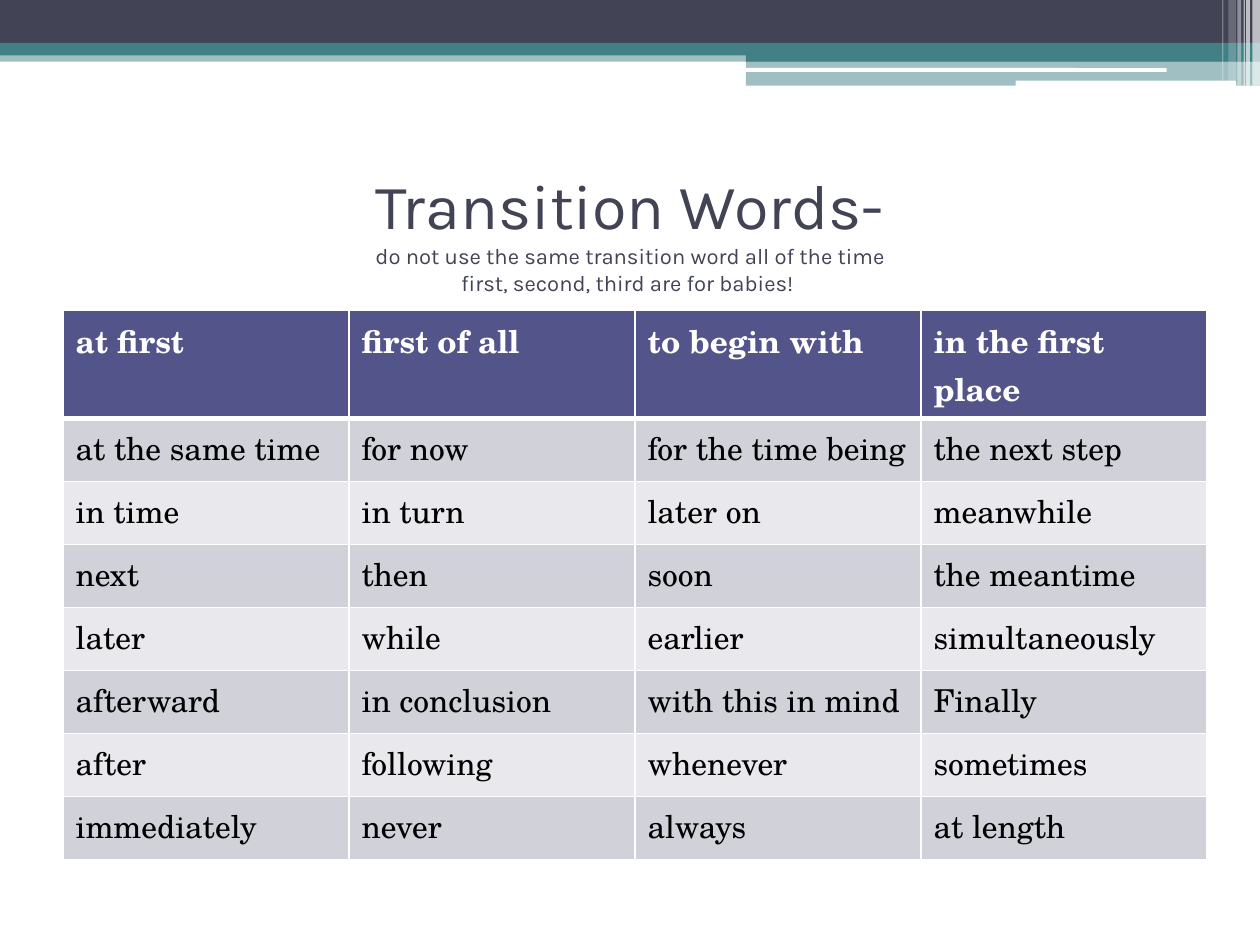
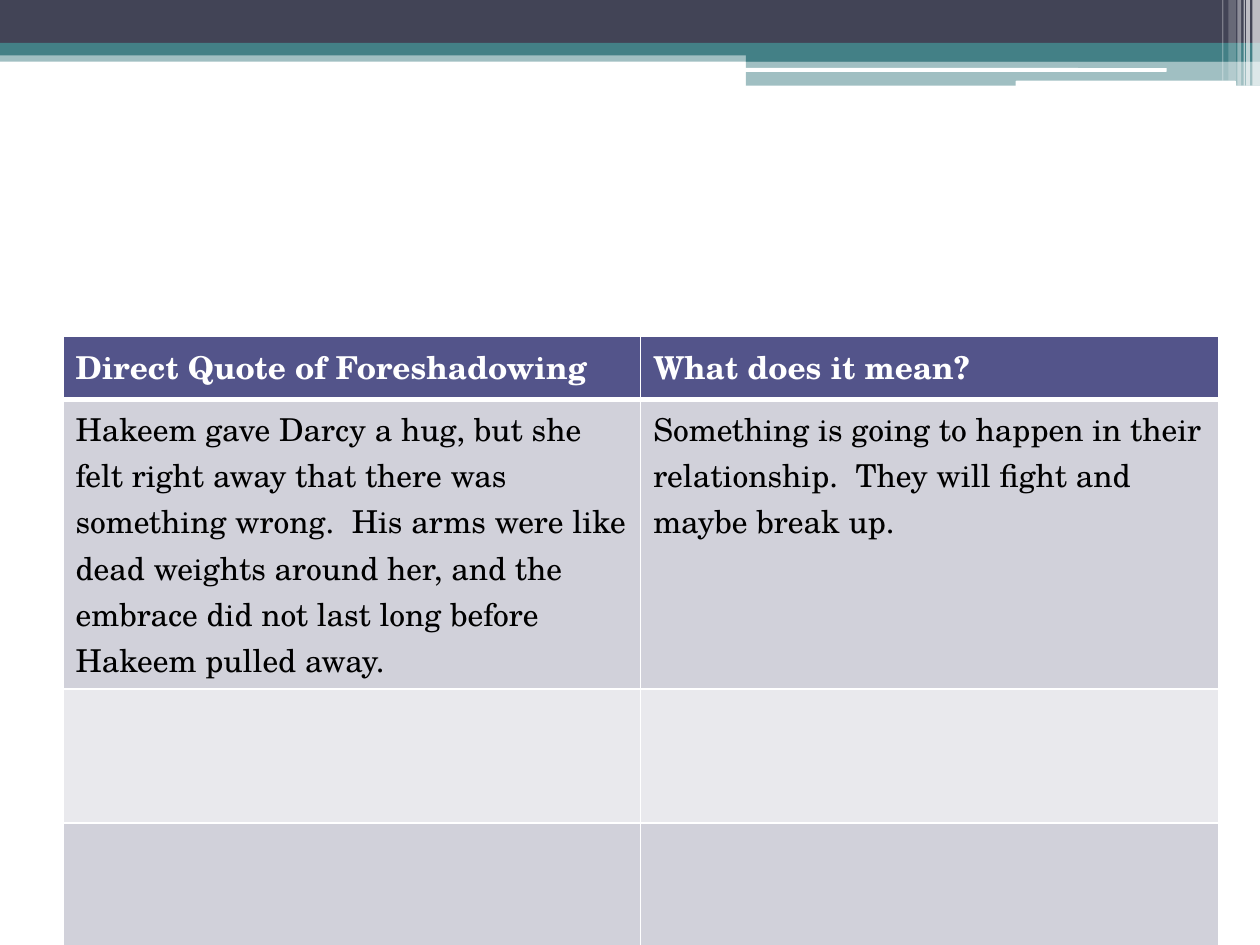
from copy import deepcopy

from lxml import etree
from pptx import Presentation
from pptx import util as u
from pptx.dml import color
from pptx.enum import shapes, text
from pptx.oxml import ns

PX = u.Inches(1) // 100
COLORS = {
    "navy": "424456",
    "teal": "438086",
    "white": "FFFFFF",
    "black": "000000",
    "header": "53548A",
    "odd": "D1D1DA",
    "even": "E9E9ED",
}
TITLE = {"name": "Karla", "size": u.Pt(36), "color": "navy"}
SUBTITLE = {**TITLE, "size": u.Pt(12.6)}
BODY = {"name": "TeX Gyre Schola", "size": u.Pt(18), "bold": False, "color": "black"}
HEADER = {**BODY, "bold": True, "color": "white"}
RECT = shapes.MSO_SHAPE.RECTANGLE
ROUNDED = shapes.MSO_SHAPE.ROUNDED_RECTANGLE

BANDS = [
    (RECT, (0, 40, 1000, 9), "teal", 50),
    (RECT, (0, 0, 1000, 34), "navy", 100),
    (RECT, (0, 34, 1000, 10), "teal", 100),
    (RECT, (592, 39, 408, 10), "teal", 100),
    (RECT, (592, 48, 408, 20), "teal", 50),
    (ROUNDED, (591, 54, 335, 3), "white", 100),
    (ROUNDED, (806, 64, 175, 5), "white", 100),
]
STRIPES = [
    (994, 6, 68, 65),
    (989, 3, 68, 65),
    (987, 1, 68, 60),
    (982, 3, 68, 40),
    (975, 6, 64, 20),
    (970, 1, 64, 30),
]
TRANSITIONS = [
    ["at first", "first of all", "to begin with", "in the first place"],
    ["at the same time", "for now", "for the time being", "the next step"],
    ["in time", "in turn", "later on", "meanwhile"],
    ["next", "then", "soon", "the meantime"],
    ["later", "while", "earlier", "simultaneously"],
    ["afterward", "in conclusion", "with this in mind", "Finally"],
    ["after", "following", "whenever", "sometimes"],
    ["immediately", "never", "always", "at length"],
]
FORESHADOWING = [
    ["Direct Quote of Foreshadowing", "What does it mean?"],
    [
        "Hakeem gave Darcy a hug, but she felt right away that there was "
        "something wrong.  His arms were like dead weights around her, and "
        "the embrace did not last long before Hakeem pulled away.",
        "Something is going to happen in their relationship.  "
        "They will fight and maybe break up.",
    ],
    ["", ""],
    ["", ""],
]


def emu(box):
    return [length * PX for length in box]


def rgb(name):
    return color.RGBColor.from_string(COLORS[name])


def paint(fill, name):
    fill.solid()
    fill.fore_color.rgb = rgb(name)


def add_span(para, words, style):
    span = para.add_run()
    span.text = words
    for key, value in style.items():
        if key == "color":
            span.font.color.rgb = rgb(value)
        else:
            setattr(span.font, key, value)
    return span


def add_band(page, preset, box, fill, opacity):
    band = page.shapes.add_shape(preset, *emu(box))
    band.shadow.inherit = False
    band.line.fill.background()
    paint(band.fill, fill)
    if opacity < 100:
        tint = band.fill._xPr.find(".//" + ns.qn("a:srgbClr"))
        etree.SubElement(tint, ns.qn("a:alpha"), val=str(opacity * 1000))


def add_banner(page):
    for band in BANDS:
        add_band(page, *band)
    for left, width, height, opacity in STRIPES:
        add_band(page, RECT, (left, 0, width, height), "white", opacity)


def add_title(page, box, lines):
    frame = page.shapes.add_textbox(*emu(box)).text_frame
    frame.word_wrap = True
    frame.vertical_anchor = text.MSO_ANCHOR.MIDDLE
    para = frame.paragraphs[0]
    para.alignment = text.PP_ALIGN.CENTER
    for index, (words, style) in enumerate(lines):
        span = add_span(para, words, style)
        if index < len(lines) - 1:
            para.add_line_break()
            para._p[-1].append(deepcopy(span._r.rPr))


def add_borders(cell, widths):
    props = cell._tc.get_or_add_tcPr()
    for index, (side, width) in enumerate(widths.items()):
        line = etree.Element(ns.qn("a:ln" + side), w=str(u.Pt(width)))
        fill = etree.SubElement(line, ns.qn("a:solidFill"))
        etree.SubElement(fill, ns.qn("a:srgbClr"), val=COLORS["white"])
        props.insert(index, line)


def add_grid(page, left, top, width, rows, heights):
    box = emu((left, top, width, sum(heights)))
    table = page.shapes.add_table(len(rows), len(rows[0]), *box).table
    for column in table.columns:
        column.width = width * PX // len(rows[0])
    for r, (words, height) in enumerate(zip(rows, heights)):
        table.rows[r].height = height * PX
        fill = "header" if r == 0 else "odd" if r % 2 else "even"
        widths = {"L": 1, "R": 1, "T": 3 if r == 1 else 1, "B": 3 if r == 0 else 1}
        for c, entry in enumerate(words):
            cell = table.cell(r, c)
            paint(cell.fill, fill)
            add_borders(cell, widths)
            if entry:
                add_span(cell.text_frame.paragraphs[0], entry, BODY if r else HEADER)


def add_page(deck):
    page = deck.slides.add_slide(deck.slide_layouts[6])
    add_banner(page)
    return page


def add_transitions(deck):
    page = add_page(deck)
    add_title(page, (50, 125, 900, 117), [
        ("Transition Words-", TITLE),
        ("do not use the same transition word all of the time", SUBTITLE),
        ("first, second, third are for babies! ", SUBTITLE),
    ])
    add_grid(page, 50, 246, 908, TRANSITIONS, [86] + [50] * 7)


def add_foreshadowing(deck):
    page = add_page(deck)
    add_grid(page, 50, 267, 917, FORESHADOWING, [50, 230, 106, 106])


def main():
    deck = Presentation()
    deck.slide_width, deck.slide_height = emu((1000, 750))
    add_transitions(deck)
    add_foreshadowing(deck)
    deck.save("out.pptx")


if __name__ == "__main__":
    main()
